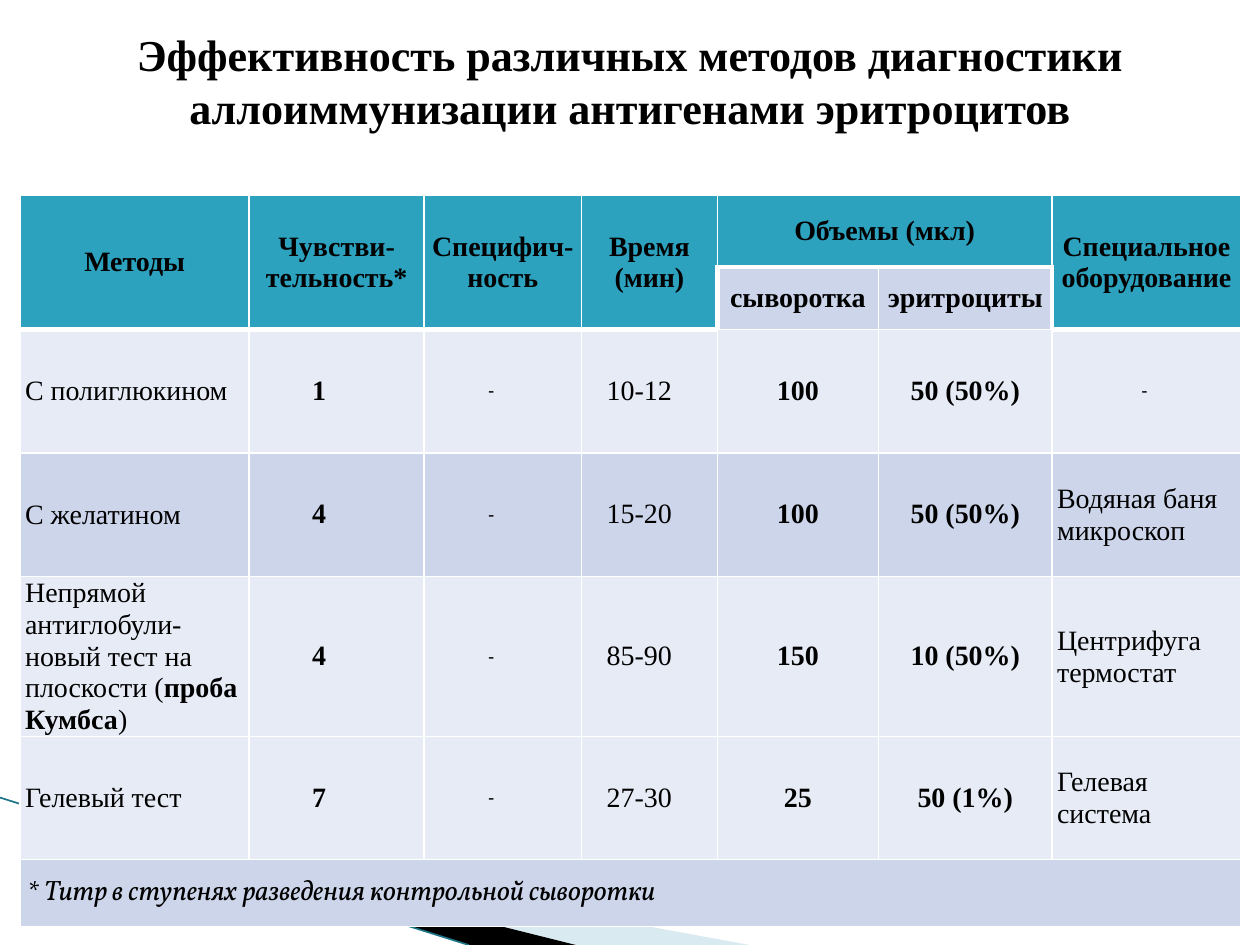
from lxml import etree
from pptx import Presentation
from pptx import util as u
from pptx.dml.color import RGBColor
from pptx.enum import shapes, text
from pptx.oxml import ns

BLACK = RGBColor(0, 0, 0)
WHITE = RGBColor(255, 255, 255)
TEAL = RGBColor(0x2D, 0xA2, 0xBF)
DARK_TEAL = RGBColor(0x1B, 0x75, 0x87)
PALE_BLUE = RGBColor(0xA0, 0xCB, 0xDC)
BAND_DARK = RGBColor(0xCC, 0xD5, 0xEA)
BAND_LIGHT = RGBColor(0xE7, 0xEB, 0xF5)
FONT = "Times New Roman"
NOTE_FONT = "Vollkorn"

TITLE = ("Эффективность различных методов диагностики "
         "аллоиммунизации антигенами эритроцитов")
COLUMN_WIDTHS = [1.82, 1.39, 1.25, 1.08, 1.28, 1.38, 1.5]
ROW_HEIGHTS = [0.57, 0.49, 0.98, 0.98, 1.27, 0.98, 0.53]
ROW_FILLS = [TEAL, TEAL, BAND_LIGHT, BAND_DARK, BAND_LIGHT, BAND_LIGHT, BAND_DARK]
VOLUME_COLUMNS = (4, 5)
HEADERS = ["Методы", "Чувстви-\nтельность*", "Специфич-\nность", "Время (мин)",
           "Объемы (мкл)", None, "Специальное оборудование"]
VOLUME_HEADERS = ["сыворотка", "эритроциты"]
BODY = [
    ["С полиглюкином", "1", "-", "10-12", "100", "50 (50%)", "-"],
    ["С желатином", "4", "-", "15-20", "100", "50 (50%)", "Водяная баня микроскоп"],
    ["Непрямой антиглобули-новый тест на плоскости (*проба Кумбса*)",
     "4", "-", "85-90", "150", "10 (50%)", "Центрифуга\nтермостат"],
    ["Гелевый тест", "7", "-", "27-30", "25", "50 (1%)", "Гелевая\nсистема"],
]
NOTE = "* Титр в ступенях разведения контрольной сыворотки"
BODY_INDENTS = [0.01, 0.47, 0.48, 0.17, None, None, 0.01]
BOLD_COLUMNS = (1, 4, 5)
DASH_INDENTS = {2: 0.48, 6: 0.68}


def set_font(font, size, bold=False, name=FONT):
    font.name = name
    font.size = u.Pt(size)
    font.bold = bold
    font.color.rgb = BLACK


def add_title(slide, left, top, width, height):
    box = slide.shapes.add_textbox(*map(u.Inches, (left, top, width, height)))
    frame = box.text_frame
    frame.word_wrap = True
    frame.vertical_anchor = text.MSO_ANCHOR.MIDDLE
    paragraph = frame.paragraphs[0]
    paragraph.text = TITLE
    paragraph.alignment = text.PP_ALIGN.CENTER
    set_font(paragraph.font, 25.2, True)


def add_wedge(slide, points, color, opacity=100):
    start, *rest = [(u.Inches(x), u.Inches(y)) for x, y in points]
    builder = slide.shapes.build_freeform(*start)
    builder.add_line_segments(rest)
    shape = builder.convert_to_shape()
    shape.shadow.inherit = False
    shape.fill.solid()
    shape.fill.fore_color.rgb = color
    shape.line.fill.background()
    if opacity < 100:
        fill_color = shape._element.spPr.find(".//" + ns.qn("a:srgbClr"))
        etree.SubElement(fill_color, ns.qn("a:alpha"), val=str(opacity * 1000))


def add_corner_decoration(slide, left, top, bottom):
    add_wedge(slide, [(left + 0.55, top + 0.18), (left + 5.95, bottom),
                      (left + 4.56, bottom)], PALE_BLUE, 40)
    add_wedge(slide, [(left + 0.53, top + 0.16), (left + 4.57, bottom),
                      (left + 3.72, bottom)], BLACK)
    edge = slide.shapes.add_connector(
        shapes.MSO_CONNECTOR.STRAIGHT, u.Inches(left), u.Inches(top),
        u.Inches(left + 3.72), u.Inches(bottom))
    edge.line.color.rgb = DARK_TEAL
    edge.line.width = u.Pt(0.95)
    etree.SubElement(edge._element.spPr, ns.qn("a:effectLst"))


def border_widths(row, column):
    volume = column in VOLUME_COLUMNS
    thick = {
        "L": (row, column) == (1, VOLUME_COLUMNS[0]),
        "R": (row, column) == (1, VOLUME_COLUMNS[-1]),
        "T": (row == 1 and volume) or (row == 2 and not volume),
        "B": row == 0 or (row == 1 and not volume),
    }
    return {side: 3 if wide else 1 for side, wide in thick.items()}


def style_cell(cell, row, column):
    cell.margin_left = cell.margin_right = u.Inches(0.03)
    cell.margin_top = cell.margin_bottom = 0
    cell.vertical_anchor = text.MSO_ANCHOR.MIDDLE
    cell.fill.solid()
    subheader = row == 1 and column in VOLUME_COLUMNS
    cell.fill.fore_color.rgb = BAND_DARK if subheader else ROW_FILLS[row]
    properties = cell._tc.get_or_add_tcPr()
    for index, (side, width) in enumerate(border_widths(row, column).items()):
        line = etree.Element(ns.qn("a:ln" + side), w=str(u.Pt(width)))
        fill = etree.SubElement(line, ns.qn("a:solidFill"))
        etree.SubElement(fill, ns.qn("a:srgbClr"), val=str(WHITE))
        properties.insert(index, line)


def write_cell(cell, content, size=16, bold=False, name=FONT, indent=None, spacing=None):
    frame = cell.text_frame
    for index, line in enumerate(content.split("\n")):
        paragraph = frame.add_paragraph() if index else frame.paragraphs[0]
        if indent is None:
            paragraph.alignment = text.PP_ALIGN.CENTER
        else:
            paragraph._p.get_or_add_pPr().set("marL", str(u.Inches(indent)))
        if spacing:
            paragraph.line_spacing = u.Pt(spacing)
        set_font(paragraph.font, size, bold, name)
        parts = line.split("*") if line.count("*") == 2 else [line]
        for position, part in enumerate(parts):
            run = paragraph.add_run()
            run.text = part
            if position == 1:
                run.font.bold = True


def write_body_cell(cell, content, column):
    if content == "-":
        write_cell(cell, content, size=10, bold=True, indent=DASH_INDENTS[column])
    else:
        write_cell(cell, content, bold=column in BOLD_COLUMNS, indent=BODY_INDENTS[column],
                   spacing=18.2 if column in (0, 6) else None)


def add_methods_table(slide, left, top, width, height):
    table = slide.shapes.add_table(
        len(ROW_HEIGHTS), len(COLUMN_WIDTHS),
        *map(u.Inches, (left, top, width, height))).table
    table.first_row = table.horz_banding = False
    for column, share in zip(table.columns, COLUMN_WIDTHS):
        column.width = u.Inches(width * share / sum(COLUMN_WIDTHS))
    for row, share in zip(table.rows, ROW_HEIGHTS):
        row.height = u.Inches(height * share / sum(ROW_HEIGHTS))
    for row in range(len(ROW_HEIGHTS)):
        for column in range(len(COLUMN_WIDTHS)):
            style_cell(table.cell(row, column), row, column)

    for column, header in enumerate(HEADERS):
        if column not in VOLUME_COLUMNS:
            table.cell(0, column).merge(table.cell(1, column))
        if header:
            write_cell(table.cell(0, column), header, bold=True)
    first, last = VOLUME_COLUMNS
    table.cell(0, first).merge(table.cell(0, last))
    for column, header in zip(VOLUME_COLUMNS, VOLUME_HEADERS):
        write_cell(table.cell(1, column), header, bold=True)

    for row, values in enumerate(BODY, start=2):
        for column, value in enumerate(values):
            write_body_cell(table.cell(row, column), value, column)

    note = table.cell(6, 0)
    note.merge(table.cell(6, 6))
    write_cell(note, NOTE, name=NOTE_FONT, indent=0.02)
    note.text_frame.paragraphs[0].font.italic = True


def main():
    presentation = Presentation()
    presentation.slide_width = u.Inches(10)
    presentation.slide_height = u.Inches(7.5)
    slide = presentation.slides.add_slide(presentation.slide_layouts[6])
    add_corner_decoration(slide, 0, 6.33, 7.5)
    add_methods_table(slide, 0.16, 1.55, 9.69, 5.8)
    add_title(slide, 0.5, 0.13, 9, 1.02)
    presentation.save("out.pptx")


if __name__ == "__main__":
    main()
